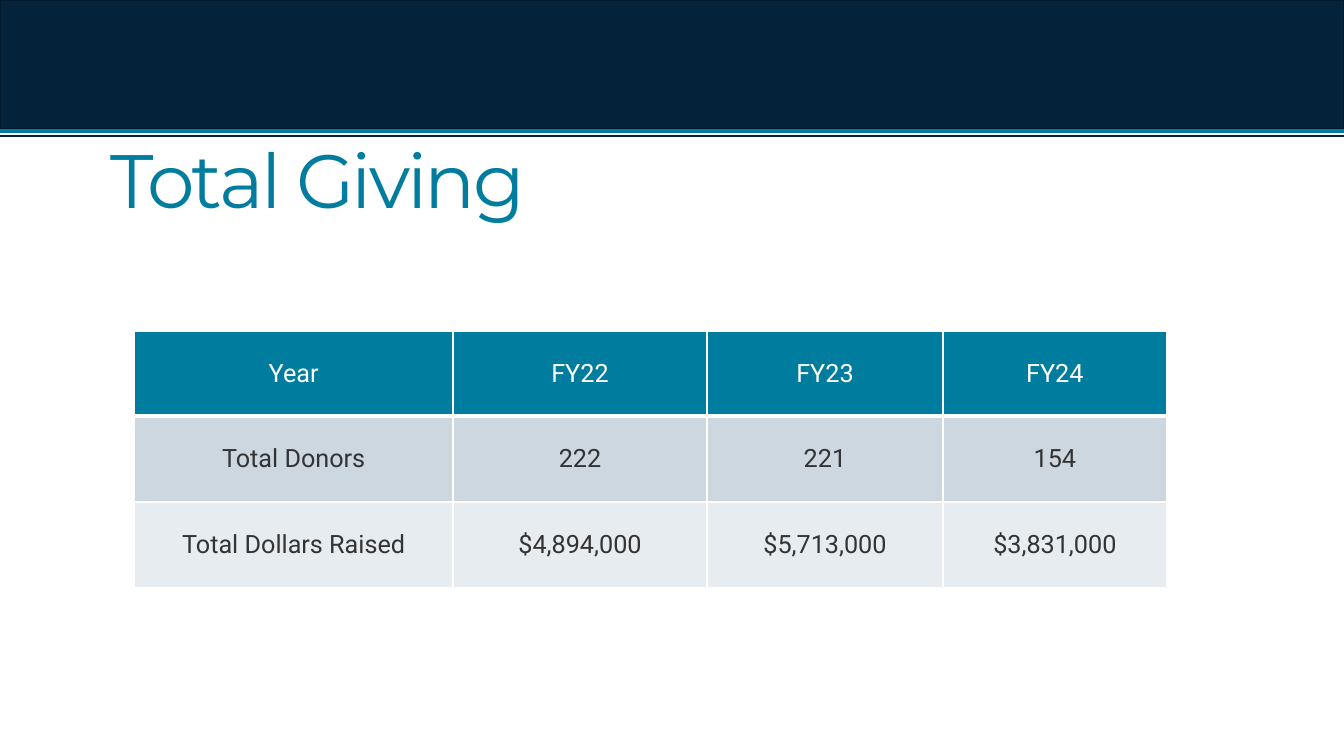
import pptx
import pptx.dml.color
import pptx.enum.shapes
import pptx.enum.text
import pptx.oxml.ns
import pptx.util
from lxml import etree

WIDTH, HEIGHT = 13.33, 7.5
COLORS = {
    "navy": "04233B",
    "navy_edge": "031A2C",
    "teal": "007D9E",
    "white": "FFFFFF",
    "text": "333333",
    "row_dark": "CCD7DF",
    "row_light": "E7ECF0",
}
GIVING = [
    ["Year", "FY22", "FY23", "FY24"],
    ["Total Donors", "222", "221", "154"],
    ["Total Dollars Raised", "$4,894,000", "$5,713,000", "$3,831,000"],
]
COLUMN_WIDTHS = [3.16, 2.52, 2.34, 2.22]
ROW_HEIGHTS = [0.84, 0.85, 0.85]
# Fill and text colour of each table row
ROW_STYLES = [("teal", "white"), ("row_dark", "text"), ("row_light", "text")]


def inches(*values):
    return [pptx.util.Inches(value) for value in values]


def color(name):
    return pptx.dml.color.RGBColor.from_string(COLORS[name])


def add_span(para, text, font, size, color_name):
    span = para.add_run()
    span.text = text
    span.font.name = font
    span.font.size = pptx.util.Pt(size)
    span.font.color.rgb = color(color_name)
    return span


def add_band(page, height):
    band = page.shapes.add_shape(
        pptx.enum.shapes.MSO_SHAPE.RECTANGLE, *inches(0, 0, WIDTH, height))
    band.shadow.inherit = False
    band.fill.solid()
    band.fill.fore_color.rgb = color("navy")
    band.line.color.rgb = color("navy_edge")
    band.line.width = pptx.util.Pt(1)


def add_rule(page, top, color_name, weight):
    rule = page.shapes.add_connector(
        pptx.enum.shapes.MSO_CONNECTOR.STRAIGHT, *inches(0, top, WIDTH, top))
    rule.line.color.rgb = color(color_name)
    rule.line.width = pptx.util.Pt(weight)
    etree.SubElement(rule._element.spPr, pptx.oxml.ns.qn("a:effectLst"))


def add_border(cell, side, weight):
    # Borders come before the fill in the cell properties
    qn = pptx.oxml.ns.qn
    border = etree.SubElement(cell._tc.get_or_add_tcPr(), qn("a:" + side))
    border.set("w", str(pptx.util.Pt(weight)))
    fill = etree.SubElement(border, qn("a:solidFill"))
    etree.SubElement(fill, qn("a:srgbClr")).set("val", COLORS["white"])


def fill_cell(cell, text, fill_name, text_name, bottom_weight):
    for side in ("lnL", "lnR", "lnT"):
        add_border(cell, side, 1)
    add_border(cell, "lnB", bottom_weight)
    cell.fill.solid()
    cell.fill.fore_color.rgb = color(fill_name)
    cell.vertical_anchor = pptx.enum.text.MSO_ANCHOR.MIDDLE
    para = cell.text_frame.paragraphs[0]
    para.alignment = pptx.enum.text.PP_ALIGN.CENTER
    add_span(para, text, "Roboto", 18, text_name)


def add_giving_table(page, left, top):
    frame = page.shapes.add_table(
        len(GIVING), len(COLUMN_WIDTHS),
        *inches(left, top, sum(COLUMN_WIDTHS), sum(ROW_HEIGHTS)))
    table = frame.table
    for column, width in zip(table.columns, COLUMN_WIDTHS):
        column.width = pptx.util.Inches(width)
    for row, height in zip(table.rows, ROW_HEIGHTS):
        row.height = pptx.util.Inches(height)
    for index, (values, style) in enumerate(zip(GIVING, ROW_STYLES)):
        bottom_weight = 3 if index == 0 else 1
        for cell, value in zip(table.rows[index].cells, values):
            fill_cell(cell, value, *style, bottom_weight)


def set_title(page, text):
    title = page.shapes.title
    title.left, title.top, title.width, title.height = inches(
        1, 1.16, 11.39, 1.33)
    box = title.text_frame
    box.word_wrap = True
    box.auto_size = pptx.enum.text.MSO_AUTO_SIZE.NONE
    box.vertical_anchor = pptx.enum.text.MSO_ANCHOR.MIDDLE
    para = box.paragraphs[0]
    para.alignment = pptx.enum.text.PP_ALIGN.LEFT
    para.line_spacing = 0.9
    span = add_span(para, text, "Montserrat", 54, "teal")
    span.font._element.set("spc", "-200")
    # Bring the title in front of the header band
    page.shapes._spTree.append(title._element)


def main():
    deck = pptx.Presentation()
    deck.slide_width, deck.slide_height = inches(WIDTH, HEIGHT)
    page = deck.slides.add_slide(deck.slide_layouts[5])

    # Header band with its two rules
    add_band(page, 1.28)
    add_rule(page, 1.3, "teal", 3)
    add_rule(page, 1.35, "navy", 1)

    # Table and title
    add_giving_table(page, WIDTH / 10, 3.29)
    set_title(page, "Total Giving")

    deck.save("out.pptx")


if __name__ == "__main__":
    main()
